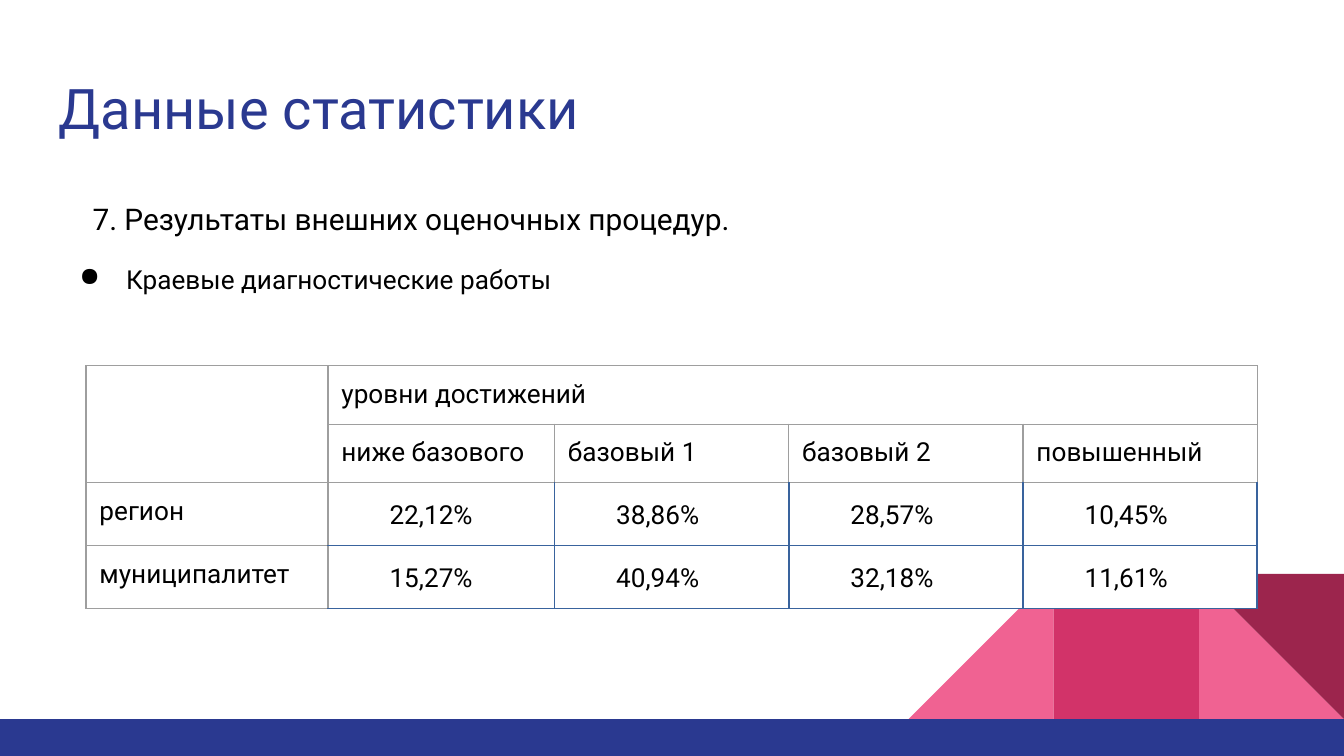
import pptx
import pptx.util
import pptx.dml.color
import pptx.enum.shapes
import pptx.enum.text
import pptx.oxml
import pptx.oxml.ns
import lxml.etree

Pt = pptx.util.Pt
RGB = pptx.dml.color.RGBColor.from_string
Kind = pptx.enum.shapes.MSO_SHAPE
Align = pptx.enum.text.PP_ALIGN
qn = pptx.oxml.ns.qn

COLOURS = {
    "navy": "2A3990", "pink": "F06292", "rose": "D23369", "wine": "9C254D",
    "white": "FFFFFF", "black": "000000", "grey": "9E9E9E", "blue": "39639D",
}
GREY, BLUE = ("grey", 0.75), ("blue", 1)

LEVELS = ["ниже базового", "базовый 1", "базовый 2", "повышенный"]
ROWS = [
    ["", "уровни достижений", "", "", ""],
    ["", *LEVELS],
    ["регион", "22,12%", "38,86%", "28,57%", "10,45%"],
    ["муниципалитет", "15,27%", "40,94%", "32,18%", "11,61%"],
]
WIDTHS = [129.6, 121.4, 125.5, 125.5, 125.5]


def apply(item, values):
    for name, value in values.items():
        setattr(item, name, value)


class Deck:
    """Holds the text style and the current slide."""

    font = "Roboto"

    def __init__(self, wide, high):
        self.prs = pptx.Presentation()
        apply(self.prs, {"slide_width": Pt(wide), "slide_height": Pt(high)})
        self.slide = self.prs.slides.add_slide(self.prs.slide_layouts[6])

    def shape(self, kind, box, colour, flip=False, turn=0):
        item = self.slide.shapes.add_shape(kind, *map(Pt, box))
        item.shadow.inherit = False
        item.fill.solid()
        item.fill.fore_color.rgb = RGB(COLOURS[colour])
        item.line.fill.background()
        item.rotation = turn
        if flip:
            item._element.spPr.find(qn("a:xfrm")).set("flipH", "1")

    def para(self, para, text, size, colour="black", indent=None, bullet=None, **form):
        """Fill a paragraph; indent is (left margin, first line)."""
        apply(para, form)
        props = para._p.get_or_add_pPr()
        if indent:
            for name, value in zip(("marL", "indent"), indent):
                props.set(name, str(Pt(value)))
        if bullet:
            lxml.etree.SubElement(props, qn("a:buChar")).set("char", bullet)
        if not text:
            end = lxml.etree.SubElement(para._p, qn("a:endParaRPr"))
            end.set("sz", str(size * 100))
            return
        run = para.add_run()
        run.text = text
        apply(run.font, {"name": self.font, "size": Pt(size)})
        run.font.color.rgb = RGB(COLOURS[colour])

    def text(self, box, paras):
        frame = self.slide.shapes.add_textbox(*map(Pt, box)).text_frame
        apply(frame, {"word_wrap": True, "margin_left": Pt(7.2), "margin_right": Pt(7.2),
                      "margin_top": Pt(7.2), "margin_bottom": Pt(7.2)})
        for i, form in enumerate(paras):
            self.para(frame.add_paragraph() if i else frame.paragraphs[0], **form)

    def border(self, cell, lines):
        """Draw the cell's left, right, top and bottom lines."""
        props = cell._tc.get_or_add_tcPr()
        for i, (side, (colour, width)) in enumerate(zip("LRTB", lines)):
            line = pptx.oxml.parse_xml(
                f'<a:ln{side} {pptx.oxml.ns.nsdecls("a")} w="{Pt(width)}"><a:solidFill>'
                f'<a:srgbClr val="{COLOURS[colour]}"/></a:solidFill></a:ln{side}>')
            props.insert(i, line)

    def table(self, left, top, widths, height, rows):
        item = self.slide.shapes.add_table(
            len(rows), len(widths), Pt(left), Pt(top), Pt(sum(widths)), Pt(height * len(rows)))
        grid = item.table
        apply(grid, {"first_row": False, "horz_banding": False})
        for col, width in zip(grid.columns, widths):
            col.width = Pt(width)
        for r, words in enumerate(rows):
            grid.rows[r].height = Pt(height)
            for c, word in enumerate(words):
                self.cell(grid.cell(r, c), word, r, c)
        grid.cell(0, 0).merge(grid.cell(1, 0))
        grid.cell(0, 1).merge(grid.cell(0, len(widths) - 1))

    def cell(self, cell, word, r, c):
        data = r > 1 and c > 0
        side = Pt(5 if data else 7.2)
        apply(cell, {"margin_left": side, "margin_right": side,
                     "margin_top": Pt(7.2), "margin_bottom": Pt(7.2)})
        form, lines = {}, [GREY] * 4
        if data:
            form = {"alignment": Align.JUSTIFY, "indent": (28, 0), "line_spacing": 1.15}
            lines = [BLUE if c > 1 else GREY, BLUE, BLUE if r > 2 else GREY, BLUE]
            cell.fill.solid()
            cell.fill.fore_color.rgb = RGB(COLOURS["white"])
        else:
            cell.fill.background()
        self.para(cell.text_frame.paragraphs[0], word, 14, **form)
        self.border(cell, lines)


def main():
    deck = Deck(720, 405)
    side, base = 77.75, 385.2
    tiles = [
        (2, Kind.RIGHT_TRIANGLE, "pink", False, 0),
        (0, Kind.RIGHT_TRIANGLE, "pink", True, 0),
        (1, Kind.RECTANGLE, "rose", False, 0),
        (2, Kind.RIGHT_TRIANGLE, "wine", False, 180),
    ]
    for col, kind, colour, flip, turn in tiles:
        box = (720 - (3 - col) * side, base - side, side, side)
        deck.shape(kind, box, colour, flip, turn)
    deck.shape(Kind.RECTANGLE, (0, base, 720, 405 - base), "navy")

    deck.text((24.5, 32.4, 671, 47.5),
              [{"text": "Данные статистики", "size": 30, "colour": "navy"}])
    space = {"line_spacing": 1.15, "space_before": Pt(12)}
    deck.text((24.5, 97.2, 671, 262.8), [
        {"text": "7. Результаты внешних оценочных процедур.", "size": 16,
         "indent": (36, -18), **space},
        {"text": "Краевые диагностические работы", "size": 14,
         "indent": (36, -25), "bullet": "●", **space},
    ])
    deck.table(46.1, 196, WIDTHS, 30.24, ROWS)
    deck.prs.save("out.pptx")


if __name__ == "__main__":
    main()
